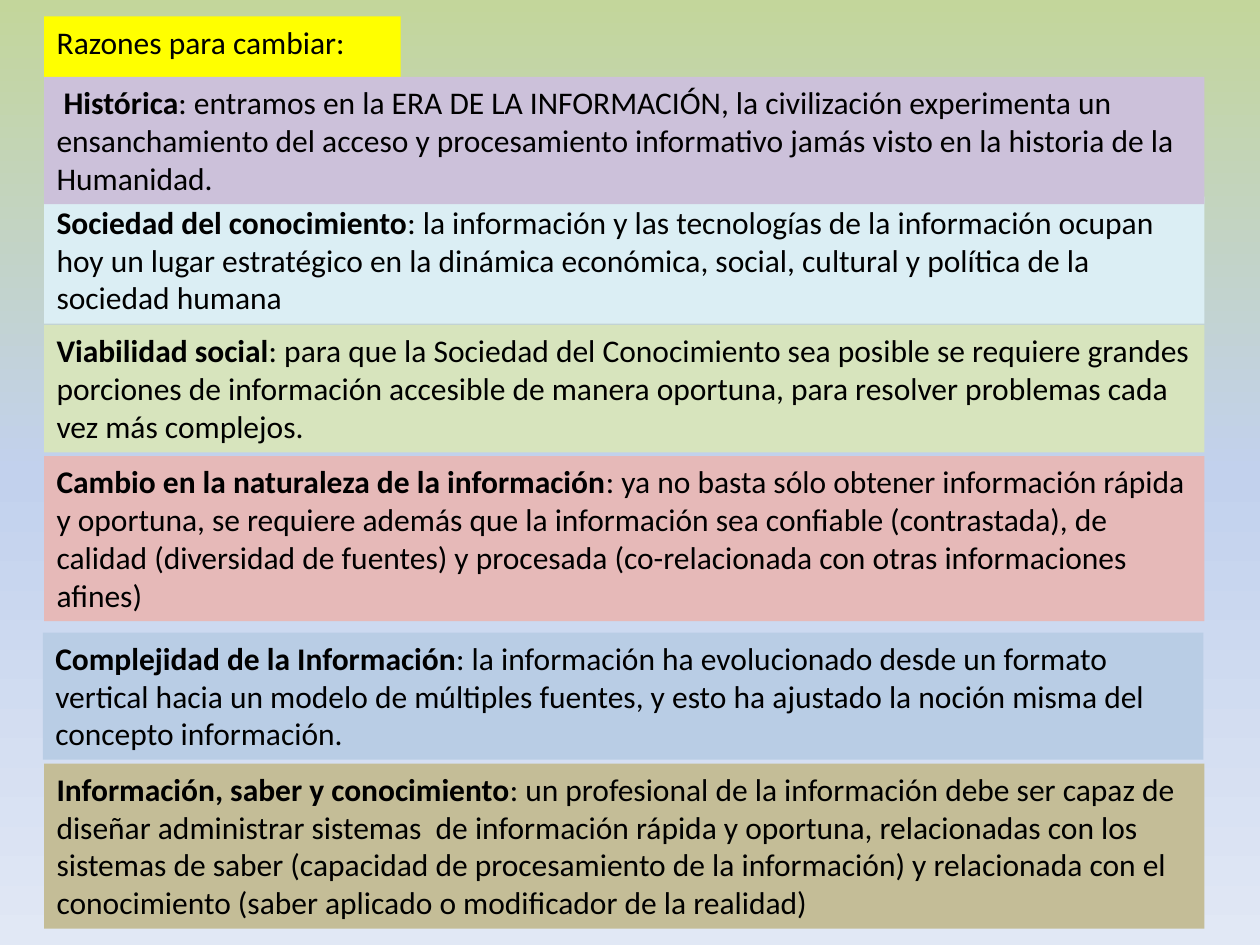
from copy import deepcopy

from pptx import Presentation
from pptx.dml.color import RGBColor
from pptx.enum.text import MSO_ANCHOR, MSO_AUTO_SIZE, PP_ALIGN
from pptx.oxml.ns import qn
from pptx.util import Inches, Pt

BLACK = RGBColor(0x00, 0x00, 0x00)
YELLOW = RGBColor(0xFF, 0xFF, 0x00)
AQUA = RGBColor(0xDB, 0xEE, 0xF4)
GREEN = RGBColor(0xD7, 0xE4, 0xBD)
ROSE = RGBColor(0xE6, 0xB9, 0xB8)
LILAC = RGBColor(0xCC, 0xC1, 0xDA)
TAN = RGBColor(0xC4, 0xBD, 0x97)
BLUE = RGBColor(0xB9, 0xCD, 0xE5)
BACKGROUND_STOPS = [
    (0, RGBColor(0xC3, 0xD6, 0x9B)),
    (0.5, RGBColor(0xC2, 0xD1, 0xED)),
    (1, RGBColor(0xE1, 0xE8, 0xF5)),
]

LEFT, WIDTH = 0.35, 9.21
THREE_LINES, FOUR_LINES = 1.01, 1.31

# Back to front: left, top, height, colour, term, explanation
REASONS = [
    (LEFT, 1.56, THREE_LINES, AQUA, "Sociedad del conocimiento",
     ": la información y las tecnologías de la información ocupan hoy un lugar "
     "estratégico en la dinámica económica, social, cultural y política de la "
     "sociedad humana"),
    (LEFT, 2.58, THREE_LINES, GREEN, "Viabilidad social",
     ": para que la Sociedad del Conocimiento sea posible se requiere grandes "
     "porciones de información accesible de manera oportuna, para resolver "
     "problemas cada vez más complejos."),
    (LEFT, 3.62, FOUR_LINES, ROSE, "Cambio en la naturaleza de la información",
     ": ya no basta sólo obtener información rápida y oportuna, se requiere "
     "además que la información sea confiable (contrastada), de calidad "
     "(diversidad de fuentes) y procesada (co-relacionada con otras "
     "informaciones afines)"),
    (LEFT, 0.61, THREE_LINES, LILAC, " Histórica",
     ": entramos en la ERA DE LA INFORMACIÓN, la civilización experimenta un "
     "ensanchamiento del acceso y procesamiento informativo jamás visto en la "
     "historia de la Humanidad."),
    (LEFT, 6.06, FOUR_LINES, TAN, "Información, saber y conocimiento",
     ": un profesional de la información debe ser capaz de diseñar administrar "
     "sistemas  de información rápida y oportuna, relacionadas con los sistemas "
     "de saber (capacidad de procesamiento de la información) y relacionada con "
     "el conocimiento (saber aplicado o modificador de la realidad)"),
    (0.34, 5.02, THREE_LINES, BLUE, "Complejidad de la Información",
     ": la información ha evolucionado desde un formato vertical hacia un modelo "
     "de múltiples fuentes, y esto ha ajustado la noción misma del concepto "
     "información."),
]


def paint_background(slide):
    fill = slide.background.fill
    fill.gradient()
    fill.gradient_angle = 270  # counter-clockwise: runs top to bottom
    # A new gradient has two stops; add the middle one
    stops = slide.element.find(".//" + qn("a:gsLst"))
    stops.insert(1, deepcopy(stops[0]))
    for stop, (position, color) in zip(fill.gradient_stops, BACKGROUND_STOPS):
        stop.position = position
        stop.color.rgb = color


def style_panel(panel, color):
    panel.fill.solid()
    panel.fill.fore_color.rgb = color
    frame = panel.text_frame
    frame.word_wrap = True
    frame.auto_size = MSO_AUTO_SIZE.SHAPE_TO_FIT_TEXT
    frame.vertical_anchor = MSO_ANCHOR.TOP
    paragraph = frame.paragraphs[0]
    paragraph.alignment = PP_ALIGN.LEFT
    for run in paragraph.runs:
        run.font.name = "Calibri"
        run.font.size = Pt(18)
        run.font.color.rgb = BLACK


def add_heading(slide):
    heading = slide.shapes.title
    heading.left, heading.top = Inches(LEFT), Inches(0.13)
    heading.width, heading.height = Inches(2.83), Inches(0.4)
    heading.text_frame.text = "Razones para cambiar:"
    style_panel(heading, YELLOW)


def add_reason(slide, left, top, height, color, term, explanation):
    reason = slide.shapes.add_textbox(
        Inches(left), Inches(top), Inches(WIDTH), Inches(height))
    paragraph = reason.text_frame.paragraphs[0]
    for words, bold in ((term, True), (explanation, False)):
        run = paragraph.add_run()
        run.text = words
        run.font.bold = bold
    style_panel(reason, color)


def main():
    presentation = Presentation()
    presentation.slide_width = Inches(10)
    presentation.slide_height = Inches(7.5)
    slide = presentation.slides.add_slide(presentation.slide_layouts[5])
    paint_background(slide)
    add_heading(slide)
    for reason in REASONS:
        add_reason(slide, *reason)
    presentation.save("out.pptx")


if __name__ == "__main__":
    main()
